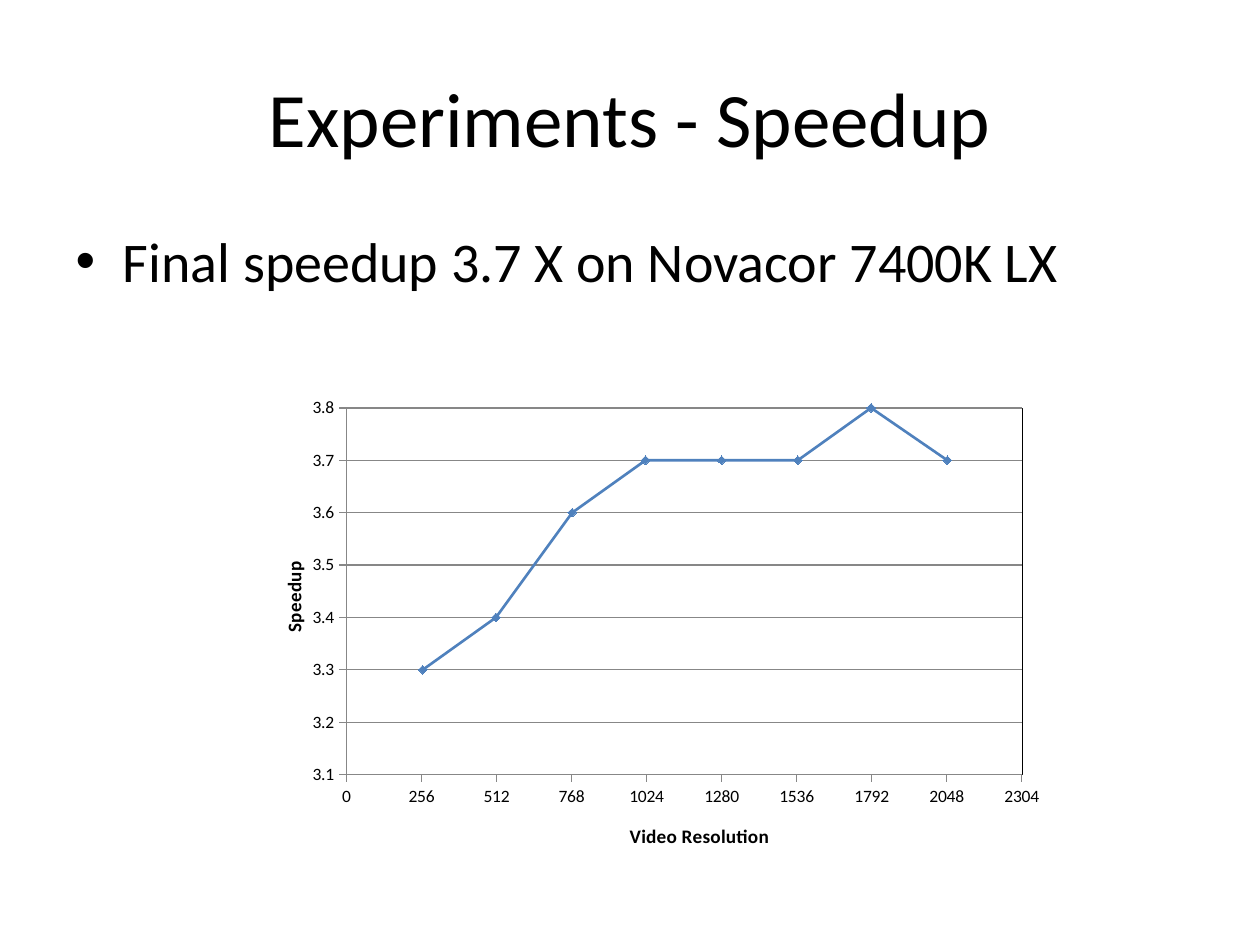
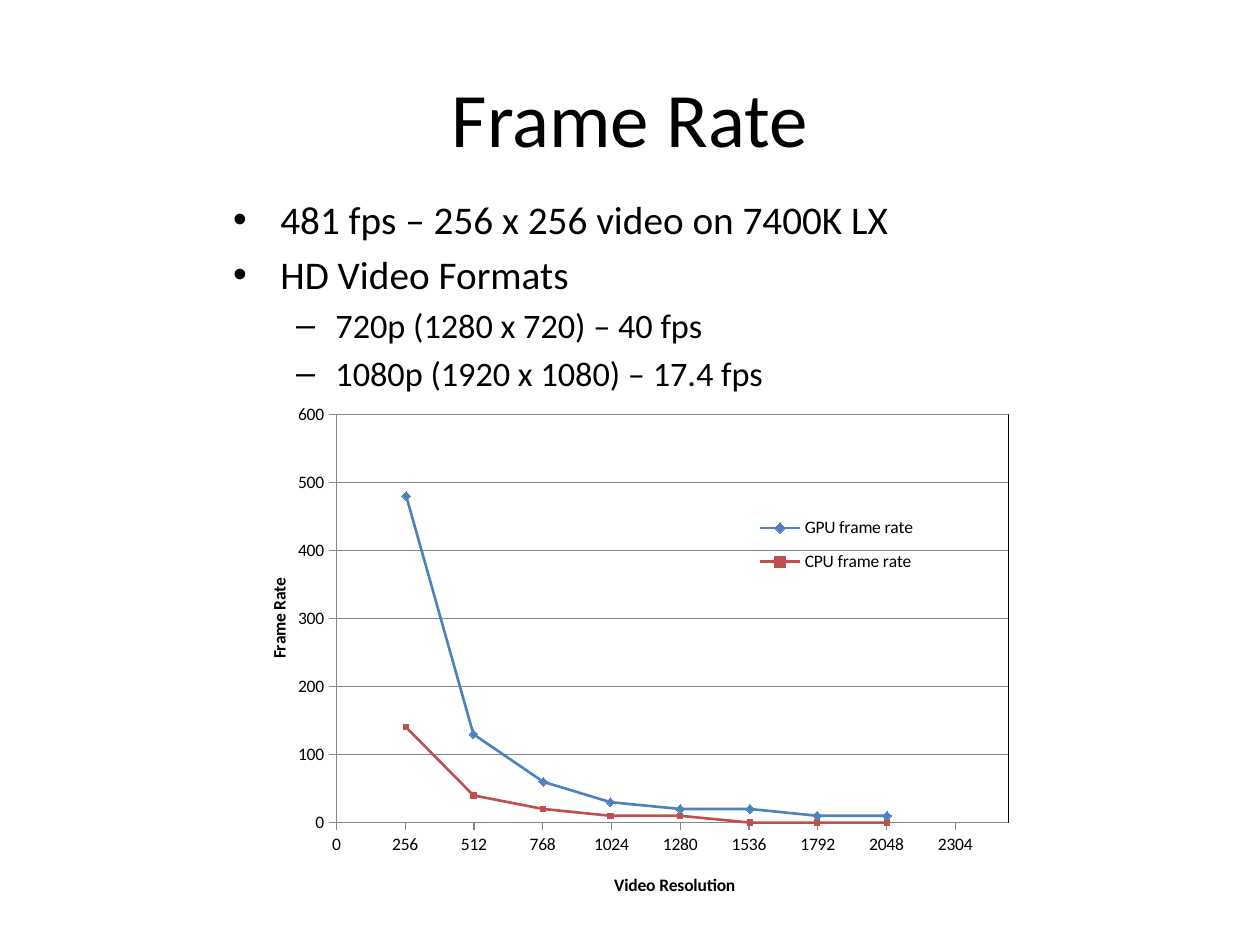
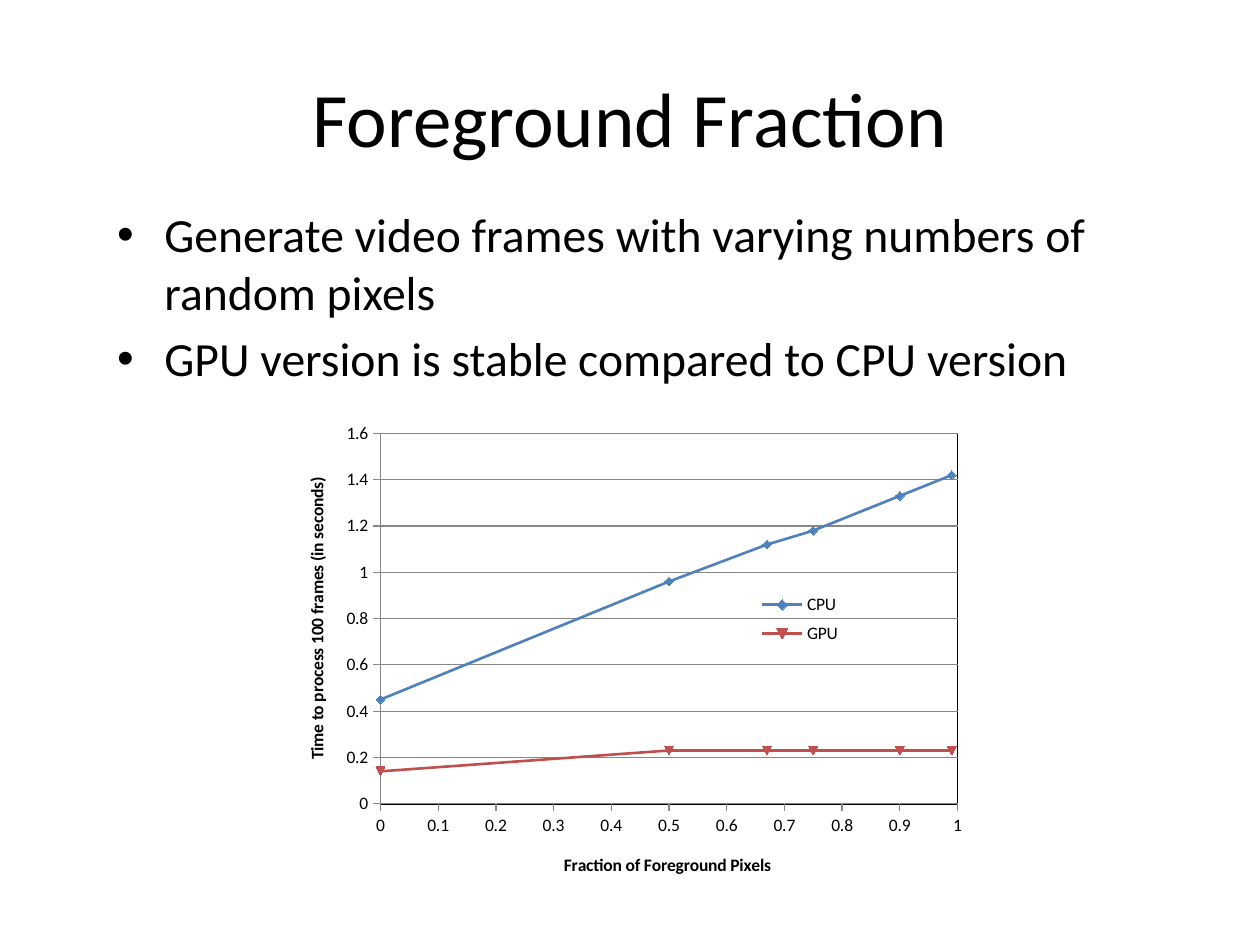
from dataclasses import dataclass

from lxml import etree
from pptx import Presentation
from pptx import util as u
from pptx.chart import data as chart_data
from pptx.dml import color
from pptx.enum import chart as ce
from pptx.enum import text as te
from pptx.oxml import ns


@dataclass(frozen=True)
class Theme:
    font: str = "Calibri"
    ink: str = "000000"
    grid: str = "878787"
    series: tuple = ("4F81BD", "C0504D")
    title_size: float = 44
    chart_size: float = 10
    series_width: float = 1.5
    rule_width: float = 0.75
    border_width: float = 0.25


THEME = Theme()
TITLE_AT = (0.5, 0.3, 9, 1.25)
RESOLUTIONS = [round(256 * step, -1) for step in range(1, 9)]
FRACTIONS = [0.99, 0.9, 0.75, 0.67, 0.5, 0]

SLIDES = [
    {
        "title": "Experiments - Speedup",
        "body_at": (0.5, 1.75, 9, 4.95),
        "sizes": (32,),
        "bullets": [(0, "Final speedup 3.7 X on Novacor 7400K LX")],
        "chart": {
            "at": (2.08, 3.08, 6.32, 3.7),
            "plot": (0.67, 0.16, 5.36, 2.95),
            "x_axis": ("Video Resolution", 0, 2304, 256),
            "y_axis": ("Speedup", 3.1, 3.8, 0.1),
            "x_title_at": (2.89, 3.47),
            "y_title_at": (0.12, 1.37),
            "axis_title_size": 11,
            "x": RESOLUTIONS,
            "series": [("Series 1", [3.3, 3.4, 3.6, 3.7, 3.7, 3.7, 3.8, 3.7])],
        },
    },
    {
        "title": "Frame Rate",
        "body_at": (1.75, 1.5, 6.33, 1.5),
        "sizes": (22.4, 19.6),
        "bullets": [
            (0, "481 fps – 256 x 256 video on 7400K LX"),
            (0, "HD Video Formats"),
            (1, "720p (1280 x 720) – 40 fps"),
            (1, "1080p (1920 x 1080) – 17.4 fps"),
        ],
        "chart": {
            "at": (2, 3.08, 6.28, 4.07),
            "plot": (0.67, 0.21, 5.33, 3.24),
            "legend": (3.95, 0.92, 1.38, 0.65),
            "x_axis": ("Video Resolution", 0, 2500, 256),
            "y_axis": ("Frame Rate", 0, 600, 100),
            "x_title_at": (2.85, 3.83),
            "y_title_at": (0.1, 1.48),
            "axis_title_size": 10,
            "x": RESOLUTIONS,
            "series": [
                ("GPU frame rate", [480, 130, 60, 30, 20, 20, 10, 10]),
                ("CPU frame rate", [140, 40, 20, 10, 10, 0, 0, 0]),
            ],
            "square_markers": {1: 3},
        },
    },
    {
        "title": "Foreground Fraction",
        "body_at": (0.83, 1.58, 8.5, 1.33),
        "sizes": (27.2,),
        "bullets": [
            (0, "Generate video frames with varying numbers of random pixels"),
            (0, "GPU version is stable compared to CPU version"),
        ],
        "chart": {
            "at": (2.25, 3.25, 5.67, 3.76),
            "plot": (0.77, 0.19, 4.58, 2.94),
            "legend": (3.73, 1.4, 0.74, 0.53),
            "x_axis": ("Fraction of Foreground Pixels", 0, 1, 0.1),
            "y_axis": ("Time to process 100 frames (in seconds)", 0, 1.6, 0.2),
            "x_title_at": (2.2, 3.5),
            "y_title_at": (0.15, 0.51),
            "axis_title_size": 10,
            "x": FRACTIONS,
            "series": [
                ("CPU", [1.42, 1.33, 1.18, 1.12, 0.96, 0.45]),
                ("GPU", [0.23, 0.23, 0.23, 0.23, 0.23, 0.14]),
            ],
        },
    },
]


def rgb(value):
    return color.RGBColor.from_string(value)


def style_font(font, size, bold=False):
    font.name = THEME.font
    font.size = u.Pt(size)
    font.bold = bold
    font.color.rgb = rgb(THEME.ink)


def style_line(line, shade, width):
    line.color.rgb = rgb(shade)
    line.width = u.Pt(width)


def add_text(frame, text, size, level=0, bold=False, align=None, first=True):
    para = frame.paragraphs[0] if first else frame.add_paragraph()
    para.level = level
    para.alignment = align
    span = para.add_run()
    span.text = text
    style_font(span.font, size, bold)


def place(box, at):
    box.left, box.top, box.width, box.height = map(u.Inches, at)
    box.text_frame.word_wrap = True
    box.text_frame.auto_size = te.MSO_AUTO_SIZE.NONE


def set_layout(parent, position, chart_size, index, inner=False):
    for old in parent.findall(ns.qn("c:layout")):
        parent.remove(old)
    layout = etree.Element(ns.qn("c:layout"))
    manual = etree.SubElement(layout, ns.qn("c:manualLayout"))
    shares = [length / chart_size[i % 2] for i, length in enumerate(position)]
    settings = [("layoutTarget", "inner")] if inner else []
    settings += [("xMode", "edge"), ("yMode", "edge"), *zip("xywh", shares)]
    for name, value in settings:
        etree.SubElement(manual, ns.qn(f"c:{name}"), val=str(value))
    parent.insert(index, layout)


def outline_plot(plot_area):
    props = etree.SubElement(plot_area, ns.qn("c:spPr"))
    etree.SubElement(props, ns.qn("a:noFill"))
    line = etree.SubElement(props, ns.qn("a:ln"), w=str(u.Pt(THEME.border_width)))
    fill = etree.SubElement(line, ns.qn("a:solidFill"))
    etree.SubElement(fill, ns.qn("a:srgbClr"), val=THEME.ink)


def format_axis(axis, content, name):
    title, axis.minimum_scale, axis.maximum_scale, axis.major_unit = content[f"{name}_axis"]
    vertical = name == "y"
    axis.has_major_gridlines = vertical
    axis.major_tick_mark = ce.XL_TICK_MARK.OUTSIDE
    axis.minor_tick_mark = ce.XL_TICK_MARK.NONE
    axis.tick_labels.number_format = "General"
    axis.tick_labels.number_format_is_linked = False
    style_line(axis.format.line, THEME.grid, THEME.rule_width)
    label = axis.axis_title
    add_text(label.text_frame, title, content["axis_title_size"], bold=True)
    set_layout(label.element, content[f"{name}_title_at"], content["at"][2:], 1)
    if vertical:
        style_line(axis.major_gridlines.format.line, THEME.grid, THEME.rule_width)
        body = label.element.find(f".//{ns.qn('a:bodyPr')}")
        body.set("rot", "-5400000")
        body.set("vert", "horz")


def add_scatter(slide, content):
    values = chart_data.XyChartData()
    for name, heights in content["series"]:
        series = values.add_series(name)
        for point in zip(content["x"], heights):
            series.add_data_point(*point)
    chart = slide.shapes.add_chart(
        ce.XL_CHART_TYPE.XY_SCATTER_LINES, *map(u.Inches, content["at"]), values
    ).chart
    size = content["at"][2:]
    chart.has_title = False
    style_font(chart.font, THEME.chart_size)
    plot = chart.plots[0]
    plot.vary_by_categories = False
    for series, shade in zip(plot.series, THEME.series):
        style_line(series.format.line, shade, THEME.series_width)
    for index, marker_size in content.get("square_markers", {}).items():
        marker = plot.series[index].marker
        marker.style = ce.XL_MARKER_STYLE.SQUARE
        marker.size = marker_size
    format_axis(chart.category_axis, content, "x")
    format_axis(chart.value_axis, content, "y")
    plot_area = chart.element.find(f".//{ns.qn('c:plotArea')}")
    set_layout(plot_area, content["plot"], size, 0, inner=True)
    outline_plot(plot_area)
    chart.has_legend = "legend" in content
    if chart.has_legend:
        chart.legend.position = ce.XL_LEGEND_POSITION.RIGHT
        chart.legend.include_in_layout = False
        legend = chart.element.find(f".//{ns.qn('c:legend')}")
        set_layout(legend, content["legend"], size, 1)


def build_slide(deck, content):
    slide = deck.slides.add_slide(deck.slide_layouts[1])
    title, body = slide.shapes.title, slide.placeholders[1]
    place(title, TITLE_AT)
    title.text_frame.vertical_anchor = te.MSO_ANCHOR.MIDDLE
    add_text(title.text_frame, content["title"], THEME.title_size, align=te.PP_ALIGN.CENTER)
    place(body, content["body_at"])
    for index, (level, text) in enumerate(content["bullets"]):
        add_text(body.text_frame, text, content["sizes"][level], level=level, first=index == 0)
    add_scatter(slide, content["chart"])


def main():
    deck = Presentation()
    deck.slide_width, deck.slide_height = u.Inches(10), u.Inches(7.5)
    for content in SLIDES:
        build_slide(deck, content)
    deck.save("out.pptx")


if __name__ == "__main__":
    main()
